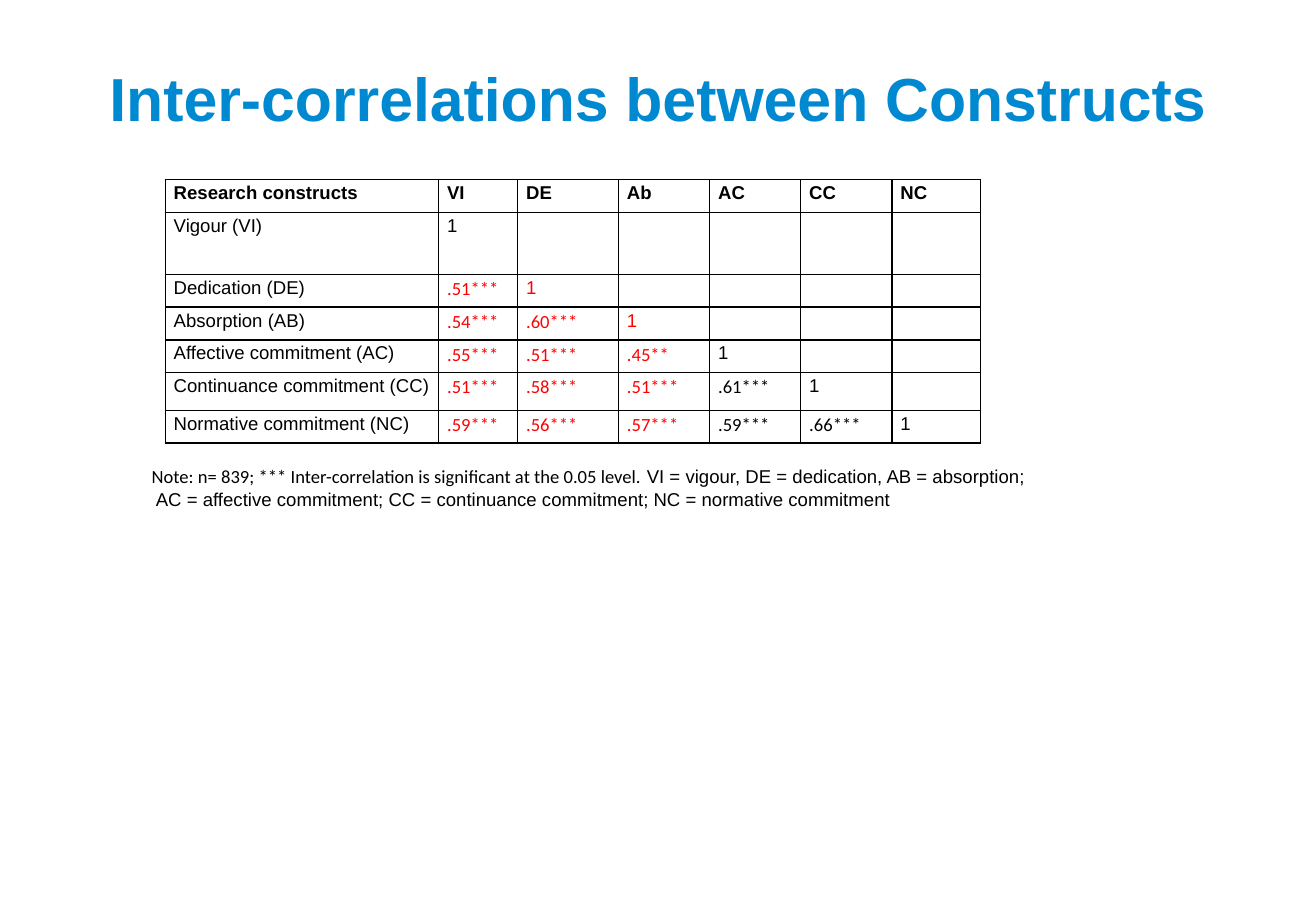
from typing import NamedTuple

from lxml import etree
from pptx import Presentation
from pptx.dml.color import RGBColor
from pptx.enum.text import MSO_ANCHOR, PP_ALIGN
from pptx.oxml.ns import qn
from pptx.util import Inches, Pt

MIDDLE, TOP = MSO_ANCHOR.MIDDLE, MSO_ANCHOR.TOP
CENTER = PP_ALIGN.CENTER
BLUE = RGBColor(0x00, 0x89, 0xD0)
BLACK = RGBColor(0x00, 0x00, 0x00)
RED = RGBColor(0xFF, 0x00, 0x00)
SANS, BODY = "Arial", "Calibri"

COL_WIDTHS = [2.25, 0.65, 0.83, 0.75, 0.75, 0.75, 0.73]
ROW_HEIGHTS = [0.27, 0.51, 0.27, 0.27, 0.27, 0.31, 0.27]
HEADINGS = ["Research constructs", "VI", "DE", "Ab", "AC", "CC", "NC"]
RED_COLS = range(1, 4)


class Construct(NamedTuple):
    name: str
    correlations: list[str]


CONSTRUCTS = [
    Construct("Vigour (VI)", []),
    Construct("Dedication (DE)", [".51***"]),
    Construct("Absorption (AB)", [".54***", ".60***"]),
    Construct("Affective commitment (AC)", [".55***", ".51***", ".45**"]),
    Construct("Continuance commitment (CC)", [".51***", ".58***", ".51***", ".61***"]),
    Construct("Normative commitment (NC)", [".59***", ".56***", ".57***", ".59***", ".66***"]),
]


def add_text(p, text: str, *, size: float = 11, font: str = SANS,
             color: RGBColor = BLACK, bold: bool = False) -> None:
    r = p.add_run()
    r.text = text
    r.font.size, r.font.name, r.font.bold = Pt(size), font, bold
    r.font.color.rgb = color


def add_box(s, left: float, top: float, width: float, height: float, *,
            anchor=MIDDLE, wrap: bool = True):
    tf = s.shapes.add_textbox(Inches(left), Inches(top), Inches(width), Inches(height)).text_frame
    tf.word_wrap, tf.vertical_anchor = wrap, anchor
    return tf


def format_cell(cell) -> None:
    """Clear the fill, set the margins and draw a black border on each side."""
    cell.fill.background()
    cell.margin_left = cell.margin_right = Inches(0.07)
    cell.margin_top = cell.margin_bottom = 0
    tc_pr = cell._tc.get_or_add_tcPr()
    for i, side in enumerate(("a:lnL", "a:lnR", "a:lnT", "a:lnB")):
        line = etree.Element(qn(side), w=str(Pt(1)))
        fill = etree.SubElement(line, qn("a:solidFill"))
        etree.SubElement(fill, qn("a:srgbClr"), val=str(BLACK))
        tc_pr.insert(i, line)


def fill_cell(cell, row: int, col: int, text: str) -> None:
    format_cell(cell)
    p = cell.text_frame.paragraphs[0]
    p.line_spacing = 1.15
    if not text:
        etree.SubElement(p._p, qn("a:endParaRPr"), sz="1100")
        return
    add_text(p, text, bold=row == 0,
             font=BODY if text.startswith(".") else SANS,
             color=RED if row > 1 and col in RED_COLS else BLACK)


def add_correlation_table(s) -> None:
    rows = [HEADINGS] + [[c.name, *c.correlations, "1"] for c in CONSTRUCTS]
    table = s.shapes.add_table(len(rows), len(HEADINGS), Inches(1.36), Inches(1.48),
                               Inches(sum(COL_WIDTHS)), Inches(sum(ROW_HEIGHTS))).table
    table.first_row = table.horz_banding = False
    for column, width in zip(table.columns, COL_WIDTHS):
        column.width = Inches(width)
    for i, (values, height) in enumerate(zip(rows, ROW_HEIGHTS)):
        table.rows[i].height = Inches(height)
        for j in range(len(HEADINGS)):
            fill_cell(table.cell(i, j), i, j, values[j] if j < len(values) else "")


def main() -> None:
    prs = Presentation()
    prs.slide_width, prs.slide_height = Inches(10.83), Inches(7.5)
    s = prs.slides.add_slide(prs.slide_layouts[6])

    p = add_box(s, 0.54, 0.3, 9.75, 1).paragraphs[0]
    p.alignment = CENTER
    add_text(p, "Inter-correlations between Constructs", size=36, color=BLUE, bold=True)

    add_correlation_table(s)

    tf = add_box(s, 1.15, 3.63, 7.46, 0.99, anchor=TOP, wrap=False)
    tf.margin_top = Inches(0.2)
    p = tf.paragraphs[0]
    add_text(p, "Note: n= 839; *** Inter-correlation is significant at the 0.05 level.", font=BODY)
    add_text(p, " VI = vigour, DE = dedication, AB = absorption;")
    add_text(tf.add_paragraph(),
             " AC = affective commitment; CC = continuance commitment; NC = normative commitment")

    prs.save("out.pptx")


if __name__ == "__main__":
    main()
